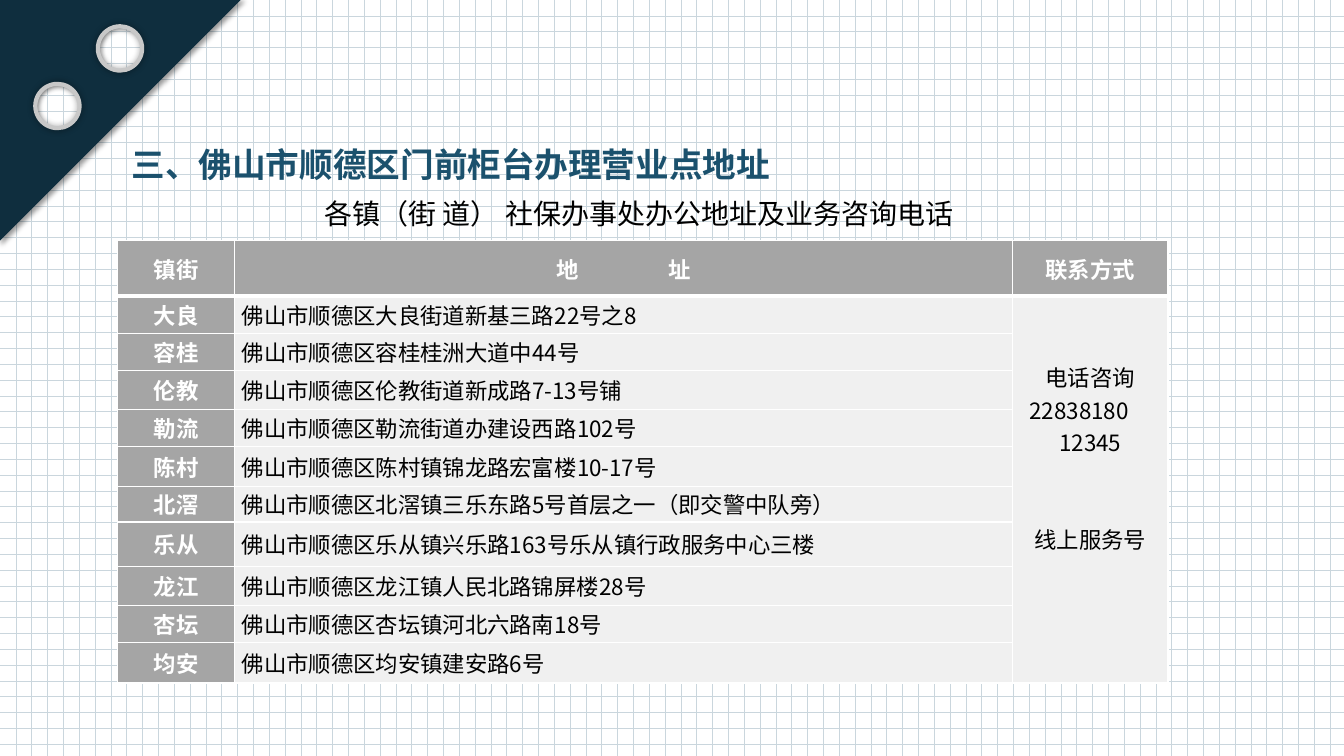
import math

import pptx
import pptx.dml.color
import pptx.enum.dml
import pptx.enum.shapes
import pptx.enum.text
import pptx.oxml
import pptx.oxml.ns
import pptx.util

Pt = pptx.util.Pt
RGB = pptx.dml.color.RGBColor.from_string
qn = pptx.oxml.ns.qn
SHAPE = pptx.enum.shapes.MSO_SHAPE
ALIGN = pptx.enum.text.PP_ALIGN
ANCHOR = pptx.enum.text.MSO_ANCHOR
NAMESPACE = 'xmlns:a="http://schemas.openxmlformats.org/drawingml/2006/main"'
FONT = "Noto Sans CJK SC"
COLORS = {
    "white": "FFFFFF", "black": "000000", "title": "1B516D", "corner": "0F2E3E",
    "ring": "C8C8C8", "header": "A5A5A5", "body": "F0F0F0",
}


def write_text(paragraph, text, size, color, bold=False):
    run = paragraph.add_run()
    run.text = text
    for name, value in {"name": FONT, "size": Pt(size), "bold": bold}.items():
        setattr(run.font, name, value)
    run.font.color.rgb = RGB(COLORS[color])
    run.font.language_id = pptx.enum.lang.MSO_LANGUAGE_ID.SIMPLIFIED_CHINESE
    run.font.fill.solid()
    run.font.color.rgb = RGB(COLORS[color])
    properties = run.font._element if hasattr(run.font, "_element") else run._r.get_or_add_rPr()
    properties.find(qn("a:latin")).addnext(
        pptx.oxml.parse_xml(f'<a:ea {NAMESPACE} typeface="{FONT}"/>'))
    return properties


def add_shadow(shape, blur, distance, degrees):
    shape.shadow.inherit = False
    shape.element.spPr.find(qn("a:effectLst")).append(pptx.oxml.parse_xml(
        f'<a:outerShdw {NAMESPACE} blurRad="{Pt(blur)}" dist="{Pt(distance)}" '
        f'dir="{degrees * 60000}" algn="ctr" rotWithShape="0">'
        f'<a:srgbClr val="{COLORS["black"]}"><a:alpha val="40000"/></a:srgbClr></a:outerShdw>'))


presentation = pptx.Presentation()
presentation.slide_width, presentation.slide_height = Pt(960), Pt(540)
slide = presentation.slides.add_slide(presentation.slide_layouts[5])
shapes = slide.shapes

# Grid paper under a translucent white sheet
grid, sheet = [
    shapes.add_shape(SHAPE.RECTANGLE, 0, Pt(top), Pt(961), Pt(542)) for top in (0, -0.5)
]
for paper in (grid, sheet):
    paper.shadow.inherit = False
    paper.line.fill.background()
grid.fill.patterned()
grid.fill.pattern = pptx.enum.dml.MSO_PATTERN.DOTTED_GRID
grid.fill.fore_color.rgb = RGB(COLORS["title"])
grid.fill.back_color.rgb = RGB(COLORS["white"])
sheet.fill.solid()
sheet.fill.fore_color.rgb = RGB(COLORS["white"])
sheet.element.spPr.find(qn("a:solidFill"))[0].append(
    pptx.oxml.parse_xml(f'<a:alpha {NAMESPACE} val="77000"/>'))

# Dark corner with two punched holes
hole_centers = [(85.7, 34.6), (41, 75.7)]
hole_radius = 15.8
outline = shapes.build_freeform(Pt(173), Pt(-1), scale=1.0)
outline.add_line_segments([(Pt(-1), Pt(173)), (Pt(-1), Pt(-1))], close=True)
for center_x, center_y in hole_centers:
    rim = [
        (Pt(center_x + hole_radius * math.cos(step * math.tau / 60)),
         Pt(center_y + hole_radius * math.sin(step * math.tau / 60)))
        for step in range(60)
    ]
    outline.move_to(*rim[0])
    outline.add_line_segments(rim[1:], close=True)
corner = outline.convert_to_shape()
corner.fill.solid()
corner.fill.fore_color.rgb = RGB(COLORS["corner"])
corner.line.fill.background()
add_shadow(corner, 4, 3, 45)
for center_x, center_y in hole_centers:
    ring = shapes.add_shape(
        SHAPE.OVAL, Pt(center_x - hole_radius), Pt(center_y - hole_radius),
        Pt(2 * hole_radius), Pt(2 * hole_radius))
    ring.fill.background()
    ring.line.color.rgb = RGB(COLORS["ring"])
    ring.line.width = Pt(3)
    add_shadow(ring, 5, 0, 0)

# Headings
title = shapes.title
title.element.getparent().append(title.element)
for name, value in {"left": 93, "top": 101.5, "width": 590, "height": 30}.items():
    setattr(title, name, Pt(value))
frame_format = {
    "margin_left": Pt(1), "margin_right": 0, "margin_top": Pt(1), "margin_bottom": 0,
    "vertical_anchor": ANCHOR.TOP, "word_wrap": True,
    "auto_size": pptx.enum.text.MSO_AUTO_SIZE.NONE,
}
for name, value in frame_format.items():
    setattr(title.text_frame, name, value)
title.text_frame.paragraphs[0].alignment = ALIGN.LEFT
write_text(title.text_frame.paragraphs[0], "三、佛山市顺德区门前柜台办理营业点地址", 24, "title", True)

subtitle = shapes.add_textbox(Pt(224.6), Pt(136.8), Pt(814), Pt(31.5))
subtitle.text_frame.word_wrap = True
write_text(subtitle.text_frame.paragraphs[0],
           "各镇（街 道） 社保办事处办公地址及业务咨询电话", 20, "black")

# Address table
offices = [
    ("大良", "佛山市顺德区大良街道新基三路22号之8"),
    ("容桂", "佛山市顺德区容桂桂洲大道中44号"),
    ("伦教", "佛山市顺德区伦教街道新成路7-13号铺"),
    ("勒流", "佛山市顺德区勒流街道办建设西路102号"),
    ("陈村", "佛山市顺德区陈村镇锦龙路宏富楼10-17号"),
    ("北滘", "佛山市顺德区北滘镇三乐东路5号首层之一（即交警中队旁）"),
    ("乐从", "佛山市顺德区乐从镇兴乐路163号乐从镇行政服务中心三楼"),
    ("龙江", "佛山市顺德区龙江镇人民北路锦屏楼28号"),
    ("杏坛", "佛山市顺德区杏坛镇河北六路南18号"),
    ("均安", "佛山市顺德区均安镇建安路6号"),
]
rows = [("镇街", "地址", "联系方式")] + [(*office, "") for office in offices]
column_widths = [84, 555.5, 111]
row_heights = [39.5, 26.5, 26.5, 28, 26.5, 28.5, 25.5, 31.5, 28, 26.5, 29]
table = shapes.add_table(
    len(rows), len(column_widths), Pt(83.8), Pt(172),
    Pt(sum(column_widths)), Pt(sum(row_heights))).table
table.first_row = table.horz_banding = False
for column, width in zip(table.columns, column_widths):
    column.width = Pt(width)
for row, height in zip(table.rows, row_heights):
    row.height = Pt(height)

for row_index, texts in enumerate(rows):
    for column_index, text in enumerate(texts):
        cell = table.cell(row_index, column_index)
        is_heading = row_index == 0 or column_index == 0
        cell_format = {
            "margin_left": Pt(5), "margin_right": Pt(5), "margin_top": 0,
            "margin_bottom": 0, "vertical_anchor": ANCHOR.MIDDLE,
        }
        for name, value in cell_format.items():
            setattr(cell, name, value)
        thick_side = {0: "B", 1: "T"}.get(row_index)
        for side in "LRTB":
            width = Pt(3 if side == thick_side else 1)
            cell._tc.get_or_add_tcPr().append(pptx.oxml.parse_xml(
                f'<a:ln{side} {NAMESPACE} w="{width}"><a:solidFill>'
                f'<a:srgbClr val="{COLORS["white"]}"/></a:solidFill></a:ln{side}>'))
        cell.fill.solid()
        cell.fill.fore_color.rgb = RGB(COLORS["header" if is_heading else "body"])
        paragraph = cell.text_frame.paragraphs[0]
        paragraph.alignment = ALIGN.CENTER if is_heading else ALIGN.LEFT
        color = "white" if is_heading else "black"
        if text == "地址":
            write_text(paragraph, text[0], 16, color, True).set("spc", "6400")
            text = text[1]
        if text:
            write_text(paragraph, text, 16, color, is_heading)

contact = table.cell(1, 2)
contact.merge(table.cell(len(offices), 2))
contact.vertical_anchor = ANCHOR.TOP
contact.margin_top = Pt(46.3)
contact_lines = [("电话咨询22838180　", 0), ("12345", 0), ("线上服务号", 46.3)]
for index, (text, gap) in enumerate(contact_lines):
    frame = contact.text_frame
    paragraph = frame.add_paragraph() if index else frame.paragraphs[0]
    paragraph.alignment = ALIGN.CENTER
    paragraph.space_before = Pt(gap)
    write_text(paragraph, text, 16, "black")

presentation.save("out.pptx")
